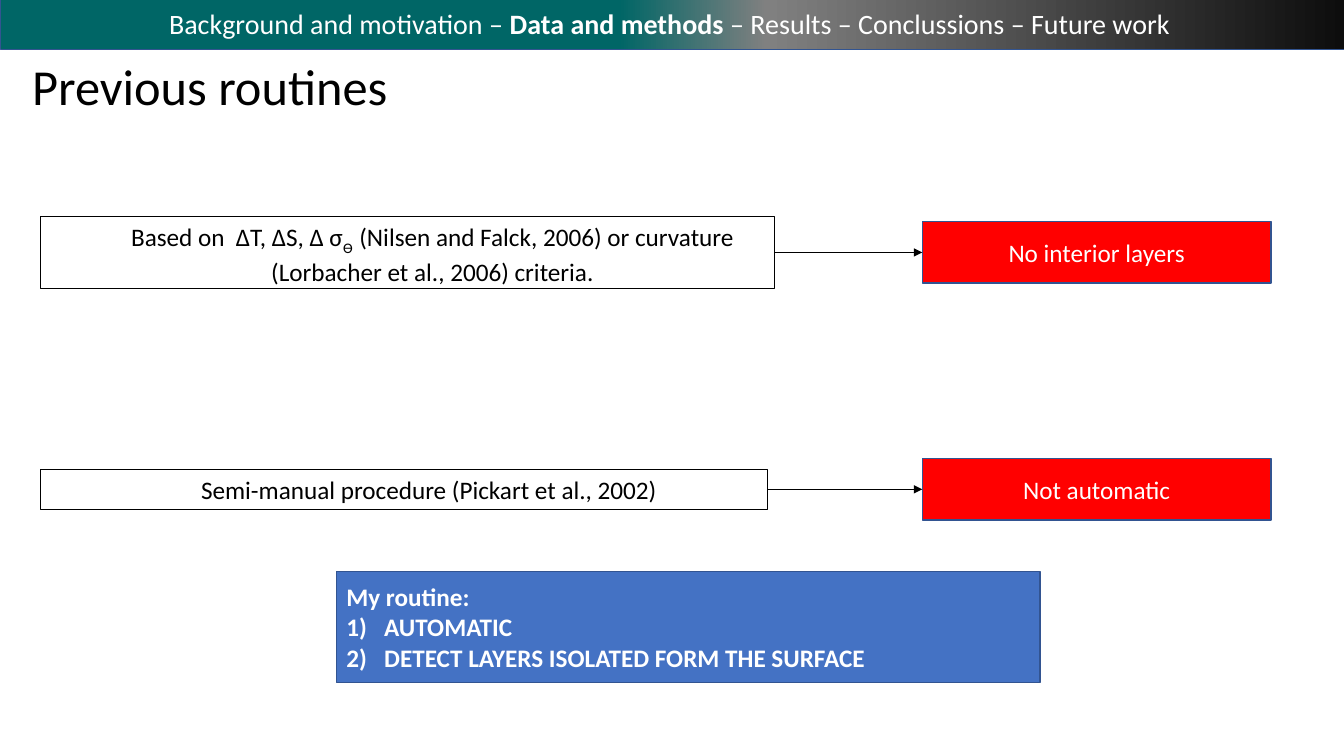
from dataclasses import dataclass

from lxml import etree
from pptx import Presentation
from pptx.dml.color import RGBColor
from pptx.enum import shapes, text
from pptx.oxml import ns
from pptx.util import Pt


@dataclass(frozen=True)
class Theme:
    font: str = "Calibri"
    title_size: int = 36
    banner_size: int = 20
    body_size: int = 18
    ink: str = "000000"
    paper: str = "FFFFFF"
    warning: str = "FF0000"
    accent: str = "4472C4"
    outline: str = "325491"
    banner_stops: tuple = ((46, "006666"), (57, "808080"), (100, "0D0D0D"))


THEME = Theme()


def color(value):
    return RGBColor.from_string(value)


def add_element(parent, tag, **attributes):
    return etree.SubElement(parent, ns.qn(tag), attributes)


def set_font(paragraph, size, ink, bold=None):
    font = paragraph.font
    font.name, font.size, font.bold = THEME.font, Pt(size), bold
    font.color.rgb = color(ink)


def add_runs(paragraph, runs):
    """Add (text, style) runs; style is "", "bold" or "subscript"."""
    for words, style in runs:
        run = paragraph.add_run()
        run.text = words
        if style == "bold":
            run.font.bold = True
        elif style == "subscript":
            run._r.get_or_add_rPr().set("baseline", "-25000")


def place(shape, left, top, width, height):
    shape.left, shape.top = Pt(left), Pt(top)
    shape.width, shape.height = Pt(width), Pt(height)


def add_box(slide, box, runs, size, ink, outline, line_width, fill=None, indent=0):
    shape = slide.shapes.add_shape(shapes.MSO_SHAPE.RECTANGLE, *map(Pt, box))
    shape.shadow.inherit = False
    if fill:
        shape.fill.solid()
        shape.fill.fore_color.rgb = color(fill)
    else:
        shape.fill.background()
    shape.line.color.rgb = color(outline)
    shape.line.width = Pt(line_width)
    frame = shape.text_frame
    frame.word_wrap = True
    frame.vertical_anchor = text.MSO_ANCHOR.MIDDLE if fill else text.MSO_ANCHOR.TOP
    paragraph = frame.paragraphs[0]
    paragraph.alignment = text.PP_ALIGN.CENTER
    if indent:
        paragraph._p.get_or_add_pPr().set("marL", str(Pt(indent)))
    add_runs(paragraph, runs)
    set_font(paragraph, size, ink)
    return shape


def add_banner(slide, box, runs):
    banner = add_box(slide, box, runs, THEME.banner_size, THEME.paper,
                     THEME.outline, 1, fill=THEME.accent)
    banner.fill.gradient()
    banner.fill.gradient_angle = 0
    stops = banner._element.spPr.find(ns.qn("a:gradFill")).find(ns.qn("a:gsLst"))
    for stop in list(stops):
        stops.remove(stop)
    for percent, value in THEME.banner_stops:
        stop = add_element(stops, "a:gs", pos=str(percent * 1000))
        add_element(stop, "a:srgbClr", val=value)


def fill_title(title, box, words):
    place(title, *box)
    frame = title.text_frame
    frame.text = words
    frame.word_wrap = False
    frame.auto_size = text.MSO_AUTO_SIZE.NONE
    frame.vertical_anchor = text.MSO_ANCHOR.MIDDLE
    paragraph = frame.paragraphs[0]
    paragraph.alignment = text.PP_ALIGN.LEFT
    set_font(paragraph, THEME.title_size, THEME.ink)


def add_arrow(slide, start, end):
    """Join the right side of start to the left side of end."""
    arrow = slide.shapes.add_connector(shapes.MSO_CONNECTOR.STRAIGHT, 0, 0, 0, 0)
    arrow.begin_connect(start, 3)
    arrow.end_connect(end, 1)
    arrow.line.color.rgb = color(THEME.ink)
    arrow.line.width = Pt(0.5)
    add_element(arrow.line._get_or_add_ln(), "a:tailEnd", type="triangle")
    add_element(arrow._element.spPr, "a:effectLst")


def add_routine_row(slide, box, method_size, method_runs, drawback):
    """Place a method at the left of the box and its drawback at the right."""
    left, top, width, height = box
    method_width, method_height = method_size
    drawback_width = 249.1
    method_box = (left, top + (height - method_height) / 2, method_width, method_height)
    drawback_box = (left + width - drawback_width, top, drawback_width, height)
    method = add_box(slide, method_box, method_runs, THEME.body_size,
                     THEME.ink, THEME.ink, 0.75, indent=36)
    result = add_box(slide, drawback_box, [(drawback, "")], THEME.body_size,
                     THEME.paper, THEME.outline, 1, fill=THEME.warning)
    add_arrow(slide, method, result)


def fill_proposal(body, box, heading, items):
    place(body, *box)
    body.fill.solid()
    body.fill.fore_color.rgb = color(THEME.accent)
    body.line.color.rgb = color(THEME.outline)
    body.line.width = Pt(1)
    frame = body.text_frame
    frame.word_wrap = True
    frame.auto_size = text.MSO_AUTO_SIZE.NONE
    frame.vertical_anchor = text.MSO_ANCHOR.MIDDLE
    frame.text = "\n".join([heading, *items])
    for index, paragraph in enumerate(frame.paragraphs):
        hanging = Pt(27) if index else 0
        paragraph.space_before = Pt(0)
        properties = paragraph._p.get_or_add_pPr()
        properties.set("marL", str(hanging))
        properties.set("indent", str(-hanging))
        if index:
            add_element(properties, "a:buFont", typeface="+mj-lt")
            add_element(properties, "a:buAutoNum", type="arabicParenR")
        else:
            add_element(properties, "a:buNone")
        set_font(paragraph, THEME.body_size, THEME.paper, bold=True)


def build_routines_slide(presentation):
    slide = presentation.slides.add_slide(presentation.slide_layouts[1])
    title, body = slide.placeholders
    fill_title(title, (15.8, 35.3, 270.7, 51.1), "Previous routines")
    add_routine_row(
        slide, (28.8, 158.4, 879.1, 43.9), (524.2, 51.1),
        [("Based on  ΔT, ΔS, Δ σ", ""), ("ϴ  ", "subscript"),
         ("(Nilsen and Falck, 2006) or curvature (Lorbacher et al., 2006) criteria.", "")],
        "No interior layers")
    add_routine_row(
        slide, (28.8, 327.6, 879.1, 43.9), (519.1, 29),
        [("Semi-manual procedure (Pickart et al., 2002)", "")], "Not automatic")
    fill_proposal(body, (240.2, 408.2, 502.6, 79.2), "My routine:",
                  ["AUTOMATIC", "DETECT LAYERS ISOLATED FORM THE SURFACE"])
    add_banner(slide, (0.5, -1.4, 960, 36.7),
               [("Background and motivation – ", ""), ("Data and methods ", "bold"),
                ("– Results – Conclussions – Future work ", "")])


def main():
    presentation = Presentation()
    presentation.slide_width, presentation.slide_height = Pt(960), Pt(540)
    build_routines_slide(presentation)
    presentation.save("out.pptx")


if __name__ == "__main__":
    main()
